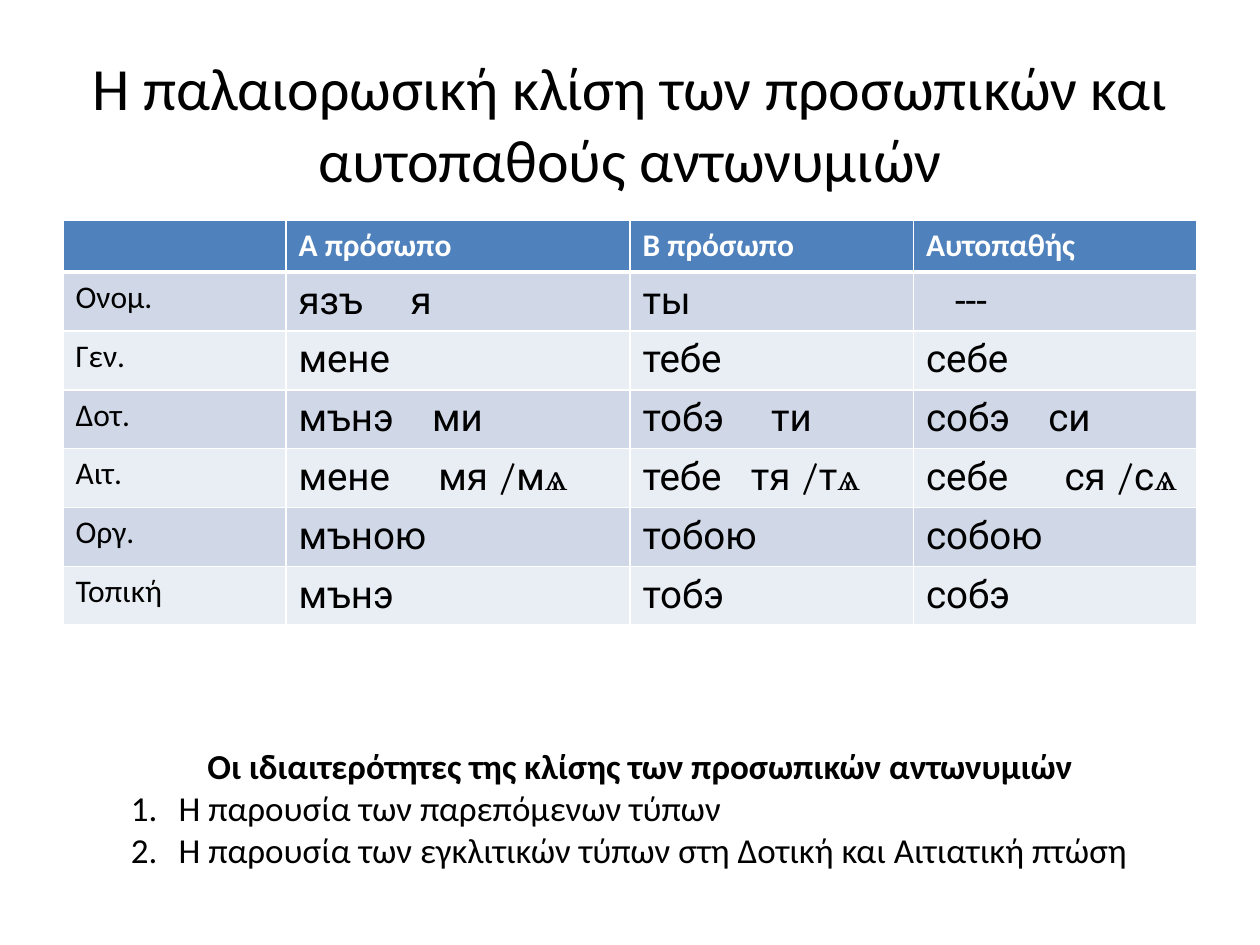
import dataclasses

import lxml.etree
import pptx
import pptx.dml.color
import pptx.enum.text
import pptx.oxml.ns
import pptx.util

Inches = pptx.util.Inches
RGBColor = pptx.dml.color.RGBColor
ALIGN = pptx.enum.text.PP_ALIGN
ANCHOR = pptx.enum.text.MSO_ANCHOR

BLACK = RGBColor(0x00, 0x00, 0x00)
WHITE = RGBColor(0xFF, 0xFF, 0xFF)
HEADER_BLUE = RGBColor(0x4F, 0x81, 0xBD)
BANDS = (RGBColor(0xD0, 0xD8, 0xE8), RGBColor(0xE9, 0xED, 0xF4))

TITLE_STYLE = {"size": pptx.util.Pt(34.2), "name": "Calibri"}
HEADER_STYLE = {"size": pptx.util.Pt(18), "name": "Calibri", "bold": True}
CASE_STYLE = HEADER_STYLE | {"bold": False}
FORM_STYLE = {"size": pptx.util.Pt(22), "name": "Roboto", "bold": False}
HEADING_STYLE = {"size": pptx.util.Pt(20), "name": "Calibri", "bold": True}
POINT_STYLE = HEADING_STYLE | {"bold": False}


@dataclasses.dataclass(frozen=True)
class Form:
    """A pronoun form, with its clitic at a tab stop and the stem of a variant in ѧ."""
    full: str
    clitic: str = ""
    tab: float = 0
    variant_stem: str = ""
    indent: float = 0


@dataclasses.dataclass(frozen=True)
class Case:
    label: str
    forms: tuple[Form, ...]


TITLE = "Η παλαιορωσική κλίση των προσωπικών και αυτοπαθούς αντωνυμιών"
HEADERS = ("", "Α πρόσωπο", "Β πρόσωπο", "Αυτοπαθής")
CASES = (
    Case("Ονομ.", (Form("язъ", "я", 0.89), Form("ты"), Form("---", indent=0.23))),
    Case("Γεν.", (Form("мене"), Form("тебе"), Form("себе"))),
    Case("Δοτ.", (Form("мънэ", "ми", 1.06), Form("тобэ", "ти", 1.02),
                  Form("собэ", "си", 0.97))),
    Case("Αιτ.", (Form("мене", "мя", 1.11, "м"), Form("тебе", "тя", 0.86, "т"),
                  Form("себе", "ся", 1.1, "с"))),
    Case("Οργ.", (Form("мъною"), Form("тобою"), Form("собою"))),
    Case("Τοπική", (Form("мънэ"), Form("тобэ"), Form("собэ"))),
)
COLUMN_WIDTHS = (1.77, 2.73, 2.25, 2.25)
HEADER_HEIGHT, CASE_HEIGHT = 0.41, 0.46
FEATURES_HEADING = "Οι ιδιαιτερότητες της κλίσης των προσωπικών αντωνυμιών"
FEATURES = (
    "Η παρουσία των παρεπόμενων τύπων",
    "Η παρουσία των εγκλιτικών τύπων στη Δοτική και Αιτιατική πτώση",
)


def add_xml(parent, tag: str, **attributes: str):
    return lxml.etree.SubElement(parent, pptx.oxml.ns.qn(tag), attributes)


def add_run(paragraph, text: str, style: dict, color: RGBColor = BLACK) -> None:
    run = paragraph.add_run()
    run.text = text
    for attribute, value in style.items():
        setattr(run.font, attribute, value)
    run.font.color.rgb = color


def add_text_frame(slide, left: float, top: float, width: float, height: float):
    box = slide.shapes.add_textbox(*map(Inches, (left, top, width, height)))
    box.text_frame.word_wrap = True
    return box.text_frame


def style_cell(cell, fill: RGBColor, top: float = 1, bottom: float = 1) -> None:
    """Draw white borders, widths in points, and fill the cell."""
    properties = cell._tc.get_or_add_tcPr()
    for side, width in {"L": 1, "R": 1, "T": top, "B": bottom}.items():
        line = add_xml(properties, f"a:ln{side}", w=str(int(pptx.util.Pt(width))))
        add_xml(add_xml(line, "a:solidFill"), "a:srgbClr", val=str(WHITE))
    cell.fill.solid()
    cell.fill.fore_color.rgb = fill


def write_form(paragraph, form: Form) -> None:
    properties = paragraph._p.get_or_add_pPr()
    if form.indent:
        properties.set("marL", str(int(Inches(form.indent))))
    text = form.full
    if form.clitic:
        stops = add_xml(properties, "a:tabLst")
        add_xml(stops, "a:tab", pos=str(int(Inches(form.tab))), algn="l")
        text += "\t" + form.clitic
    if not form.variant_stem:
        add_run(paragraph, text, FORM_STYLE)
        return
    parts = ((text + " ", "Roboto"), ("/", "Cambria"),
             (form.variant_stem, "Roboto"), ("ѧ", "Times New Roman"))
    for part, font_name in parts:
        add_run(paragraph, part, FORM_STYLE | {"name": font_name})


def add_title(slide) -> None:
    frame = add_text_frame(slide, 0.5, 0.3, 9, 1.34)
    frame.vertical_anchor = ANCHOR.MIDDLE
    frame.paragraphs[0].alignment = ALIGN.CENTER
    add_run(frame.paragraphs[0], TITLE, TITLE_STYLE)


def add_declension(slide) -> None:
    heights = (HEADER_HEIGHT,) + (CASE_HEIGHT,) * len(CASES)
    table = slide.shapes.add_table(
        len(heights), len(COLUMN_WIDTHS), Inches(0.5), Inches(1.75),
        Inches(sum(COLUMN_WIDTHS)), Inches(sum(heights))).table
    for column, width in zip(table.columns, COLUMN_WIDTHS):
        column.width = Inches(width)
    for row, height in zip(table.rows, heights):
        row.height = Inches(height)

    for column, header in enumerate(HEADERS):
        cell = table.cell(0, column)
        style_cell(cell, HEADER_BLUE, bottom=3)
        if header:
            add_run(cell.text_frame.paragraphs[0], header, HEADER_STYLE, WHITE)
    for row, case in enumerate(CASES, start=1):
        cells = table.rows[row].cells
        for cell in cells:
            style_cell(cell, BANDS[(row - 1) % 2], top=3 if row == 1 else 1)
        add_run(cells[0].text_frame.paragraphs[0], case.label, CASE_STYLE)
        for column, form in enumerate(case.forms, start=1):
            write_form(cells[column].text_frame.paragraphs[0], form)


def add_features(slide) -> None:
    frame = add_text_frame(slide, 0.94, 5.86, 8.28, 1.11)
    frame.paragraphs[0].alignment = ALIGN.CENTER
    add_run(frame.paragraphs[0], FEATURES_HEADING, HEADING_STYLE)
    hanging = int(Inches(0.38))
    for feature in FEATURES:
        paragraph = frame.add_paragraph()
        properties = paragraph._p.get_or_add_pPr()
        properties.set("marL", str(hanging))
        properties.set("indent", str(-hanging))
        add_xml(properties, "a:buFont", typeface="+mj-lt")
        add_xml(properties, "a:buAutoNum", type="arabicPeriod")
        add_run(paragraph, feature, POINT_STYLE)


def main() -> None:
    presentation = pptx.Presentation()
    presentation.slide_width = Inches(10)
    presentation.slide_height = Inches(7.5)
    slide = presentation.slides.add_slide(presentation.slide_layouts[6])
    add_title(slide)
    add_declension(slide)
    add_features(slide)
    presentation.save("out.pptx")


if __name__ == "__main__":
    main()
